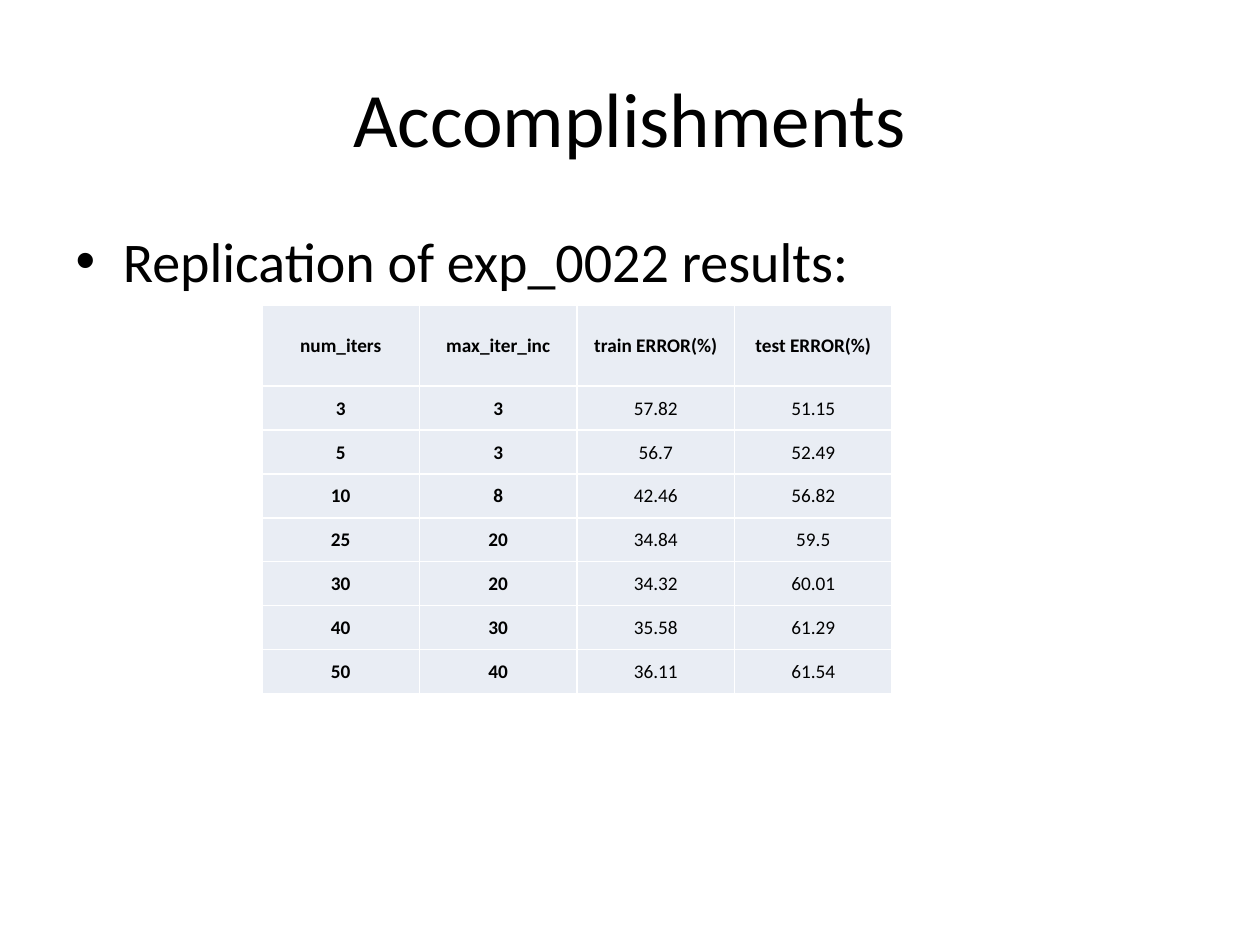
from lxml.etree import SubElement
from pptx import Presentation
from pptx.dml.color import RGBColor
from pptx.enum.text import MSO_ANCHOR as Anchor, PP_ALIGN as Align
from pptx.oxml.ns import qn
from pptx.util import Pt

EMU_PER_PX = 914400 / 126
BLACK = RGBColor(0x00, 0x00, 0x00)
WHITE = RGBColor(0xFF, 0xFF, 0xFF)
CELL_FILL = RGBColor(0xE9, 0xED, 0xF4)

HEADER = ["num_iters", "max_iter_inc", "train ERROR(%)", "test ERROR(%)"]
RESULTS = [
    ["3", "3", "57.82", "51.15"],
    ["5", "3", "56.7", "52.49"],
    ["10", "8", "42.46", "56.82"],
    ["25", "20", "34.84", "59.5"],
    ["30", "20", "34.32", "60.01"],
    ["40", "30", "35.58", "61.29"],
    ["50", "40", "36.11", "61.54"],
]


def px(length):
    return round(length * EMU_PER_PX)


class SlideBuilder:
    """Holds the style and the current slide."""

    font = "Calibri"
    title_size, body_size, cell_size = 44, 32, 11

    def __init__(self, slide):
        self.slide = slide

    def format_runs(self, para, size, bold=False):
        for span in para.runs:
            span.font.name = self.font
            span.font.size = Pt(size)
            span.font.bold = bold
            span.font.color.rgb = BLACK

    def placeholder(self, index, text, left, top, width, height, size):
        box = self.slide.placeholders[index]
        box.left, box.top, box.width, box.height = map(px, (left, top, width, height))
        box.text_frame.text = text
        para = box.text_frame.paragraphs[0]
        self.format_runs(para, size)
        return para

    def title(self, text, *frame):
        self.placeholder(0, text, *frame, self.title_size).alignment = Align.CENTER

    def bullet(self, text, *frame):
        self.placeholder(1, text, *frame, self.body_size)

    def cell_borders(self, cell):
        properties = cell._tc.get_or_add_tcPr()
        for position, side in enumerate(("lnL", "lnR", "lnT", "lnB")):
            line = SubElement(properties, qn(f"a:{side}"), w=str(Pt(1)))
            fill = SubElement(line, qn("a:solidFill"))
            SubElement(fill, qn("a:srgbClr"), val=str(WHITE))
            properties.insert(position, line)  # borders come before the fill

    def cell(self, cell, text, bold):
        cell.fill.solid()
        cell.fill.fore_color.rgb = CELL_FILL
        self.cell_borders(cell)
        cell.vertical_anchor = Anchor.MIDDLE
        cell.margin_left = cell.margin_right = cell.margin_top = px(1)
        cell.margin_bottom = 0
        cell.text_frame.text = text
        para = cell.text_frame.paragraphs[0]
        para.alignment = Align.CENTER
        self.format_runs(para, self.cell_size, bold)

    def table(self, rows, left, top, width, header_height, row_height, bold_columns):
        height = header_height + row_height * (len(rows) - 1)
        table = self.slide.shapes.add_table(
            len(rows), len(rows[0]), px(left), px(top), px(width), px(height)
        ).table
        for column in table.columns:
            column.width = px(width / len(rows[0]))
        for r, values in enumerate(rows):
            table.rows[r].height = px(row_height if r else header_height)
            for c, text in enumerate(values):
                self.cell(table.cell(r, c), text, r == 0 or c < bold_columns)


def main():
    deck = Presentation()
    deck.slide_width, deck.slide_height = px(1260), px(945)
    page = SlideBuilder(deck.slides.add_slide(deck.slide_layouts[1]))

    # Title and lead-in bullet
    page.title("Accomplishments", 63, 38, 1134, 158)
    page.bullet("Replication of exp_0022 results:", 63, 220, 1134, 672)

    # Error rates by number of iterations
    page.table([HEADER] + RESULTS, left=262, top=305, width=630,
               header_height=81, row_height=44, bold_columns=2)

    deck.save("out.pptx")


if __name__ == "__main__":
    main()
